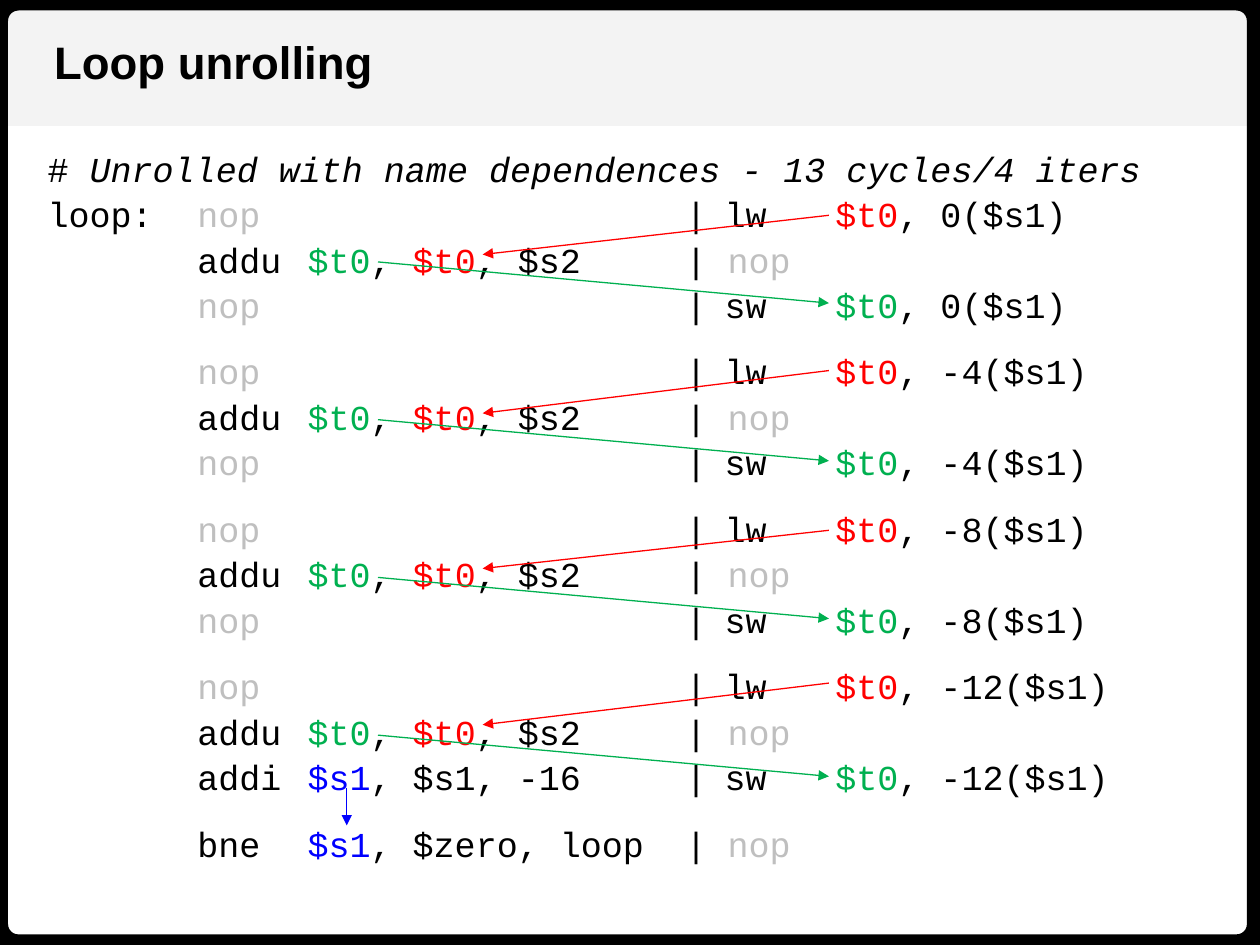
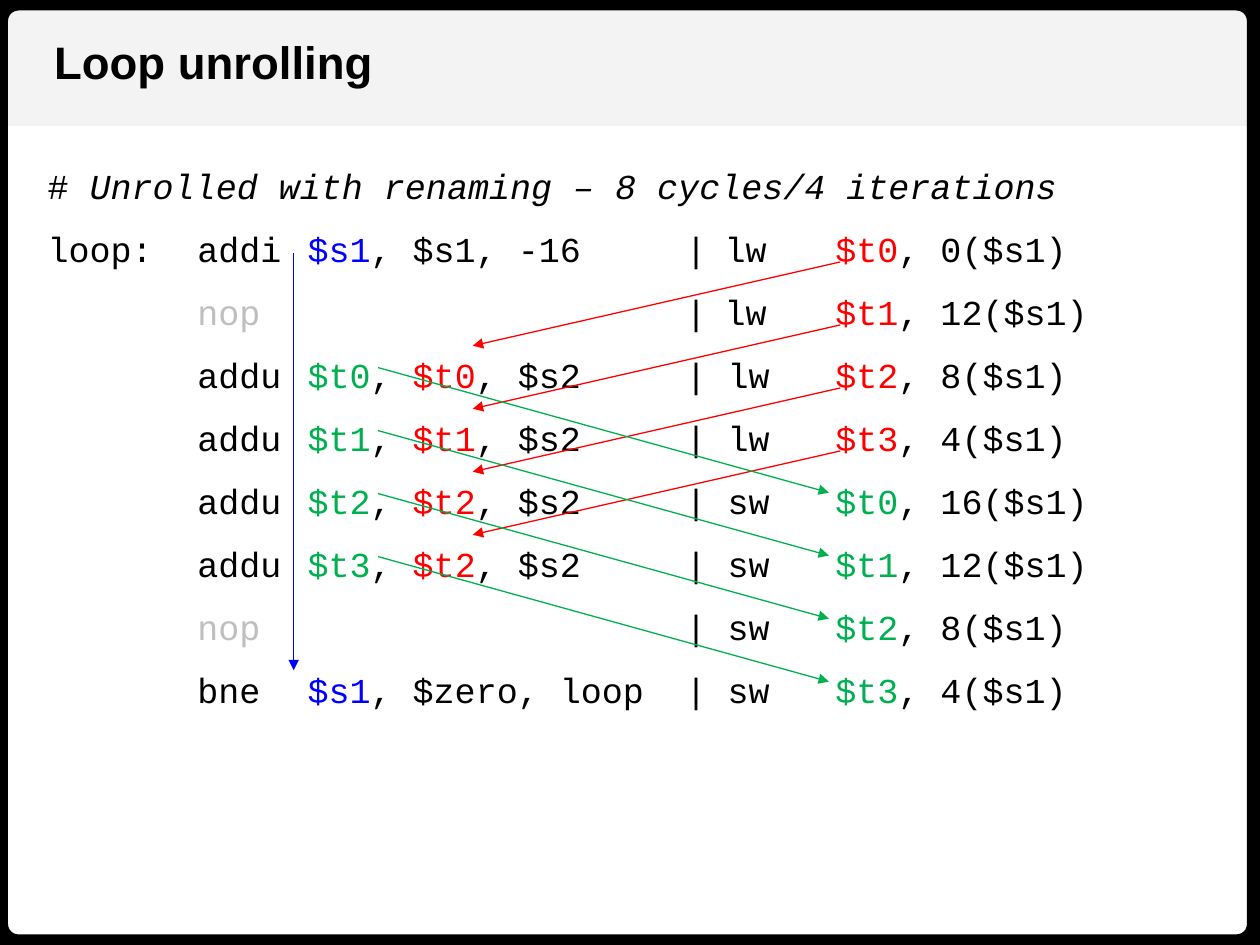
from lxml import etree
from pptx import Presentation
from pptx.dml.color import RGBColor
from pptx.enum.shapes import MSO_CONNECTOR, MSO_SHAPE
from pptx.enum.text import MSO_AUTO_SIZE
from pptx.oxml.ns import qn
from pptx.util import Cm, Pt

STRAIGHT = MSO_CONNECTOR.STRAIGHT
RECTANGLE = MSO_SHAPE.RECTANGLE
ROUNDED_RECTANGLE = MSO_SHAPE.ROUNDED_RECTANGLE
GROW = MSO_AUTO_SIZE.SHAPE_TO_FIT_TEXT

COLORS = {
    "black": "000000",
    "white": "FFFFFF",
    "band": "F3F3F3",
    "gray": "BFBFBF",
    "red": "FF0000",
    "green": "00B050",
    "blue": "0000FF",
}
TITLE_FONT = "Arial"
CODE_FONT = "Courier New"
SLIDE_WIDTH, SLIDE_HEIGHT = 25.4, 19.05
BLANK_LAYOUT = 6
# Operation, operands, separator, second operation, second operands
CODE_TABS = (3.02, 5.24, 12.86, 13.65, 15.88)


def color(name):
    return RGBColor.from_string(COLORS[name])


def add_run(paragraph, text, font=CODE_FONT, size=20, color_name="black",
            bold=False, italic=False):
    run = paragraph.add_run()
    run.text = text
    run.font.name = font
    run.font.size = Pt(size)
    run.font.bold = bold
    run.font.italic = italic
    run.font.color.rgb = color(color_name)


def add_text_box(slide, left, top, width, height, wrap=True):
    box = slide.shapes.add_textbox(Cm(left), Cm(top), Cm(width), Cm(height))
    box.text_frame.word_wrap = wrap
    box.text_frame.auto_size = GROW
    return box.text_frame


def add_band(slide):
    band = slide.shapes.add_shape(RECTANGLE, 0, 0, Cm(SLIDE_WIDTH), Cm(2.54))
    band.shadow.inherit = False
    band.fill.solid()
    band.fill.fore_color.rgb = color("band")
    band.line.fill.background()


def add_border(slide):
    border = slide.shapes.add_shape(ROUNDED_RECTANGLE, Cm(-0.05), 0,
                                    Cm(SLIDE_WIDTH), Cm(SLIDE_HEIGHT))
    border.adjustments[0] = 0.022
    border.shadow.inherit = False
    border.fill.background()
    border.line.color.rgb = color("black")
    border.line.width = Pt(12)


def add_titled_slide(presentation, title):
    slide = presentation.slides.add_slide(presentation.slide_layouts[BLANK_LAYOUT])
    slide.background.fill.solid()
    slide.background.fill.fore_color.rgb = color("white")
    add_band(slide)
    add_border(slide)
    frame = add_text_box(slide, 0.84, 0.56, 6.99, 1.37, wrap=False)
    add_run(frame.paragraphs[0], title, font=TITLE_FONT, size=26, bold=True)
    return slide


def set_tabs(paragraph, positions):
    properties = paragraph._p.get_or_add_pPr()
    tab_list = etree.SubElement(properties, qn("a:tabLst"))
    for position in positions:
        etree.SubElement(tab_list, qn("a:tab"), pos=str(Cm(position)), algn="l")


def marked(color_name, text):
    return f"{{{color_name}}}{text}{{black}}"


def red(text):
    return marked("red", text)


def green(text):
    return marked("green", text)


def blue(text):
    return marked("blue", text)


NOP = marked("gray", "nop")
IDLE = f"{NOP}\t"


def add_code_line(frame, line, line_spacing, space_before):
    """Write one line in which {name} switches the text colour."""
    paragraph = frame.add_paragraph()
    paragraph.line_spacing = line_spacing
    paragraph.space_before = Pt(space_before)
    set_tabs(paragraph, CODE_TABS)
    for piece in ("{black}" + line).split("{")[1:]:
        color_name, _, text = piece.partition("}")
        if text:
            add_run(paragraph, text, color_name=color_name)


def add_code(slide, height, comment, lines, line_spacing):
    """Write a comment, then lines given as (text, space before in points)."""
    frame = add_text_box(slide, 0.71, 2.77, 23.85, height)
    heading = frame.paragraphs[0]
    heading.line_spacing = line_spacing
    add_run(heading, "# ")
    add_run(heading, comment, italic=True)
    for line, space_before in lines:
        add_code_line(frame, line, line_spacing, space_before)


def add_arrow(slide, color_name, start_x, start_y, end_x, end_y):
    arrow = slide.shapes.add_connector(STRAIGHT, Cm(start_x), Cm(start_y),
                                       Cm(end_x), Cm(end_y))
    arrow.line.color.rgb = color(color_name)
    arrow.line.width = Pt(0.75)
    etree.SubElement(arrow.line._get_or_add_ln(), qn("a:tailEnd"), type="triangle")
    etree.SubElement(arrow._element.spPr, qn("a:effectLst"))


def name_dependence_lines():
    lines = []
    for offset in (0, -4, -8, -12):
        label = "loop:" if offset == 0 else ""
        beside_store = f"addi\t{blue('$s1')}, $s1, -16" if offset == -12 else IDLE
        lines += [
            (f"{label}\t{IDLE}\t|\tlw\t{red('$t0')}, {offset}($s1)", 12 if offset else 0),
            (f"\taddu\t{green('$t0')}, {red('$t0')}, $s2\t| {NOP}", 0),
            (f"\t{beside_store}\t|\tsw\t{green('$t0')}, {offset}($s1)", 0),
        ]
    return lines + [(f"\tbne\t{blue('$s1')}, $zero, loop\t| {NOP}", 12)]


def renamed_lines():
    left = [f"addi\t{blue('$s1')}, $s1, -16", IDLE]
    left += [f"addu\t{green(target)}, {red(source)}, $s2" for target, source in
             (("$t0", "$t0"), ("$t1", "$t1"), ("$t2", "$t2"), ("$t3", "$t2"))]
    left += [IDLE, f"bne\t{blue('$s1')}, $zero, loop"]
    right = [f"lw\t{red(f'$t{index}')}, {offset}($s1)"
             for index, offset in enumerate((0, 12, 8, 4))]
    right += [f"sw\t{green(f'$t{index}')}, {offset}($s1)"
              for index, offset in enumerate((16, 12, 8, 4))]
    lines = []
    for row, (first, second) in enumerate(zip(left, right)):
        label = "loop:" if row == 0 else ""
        gap = "\t" if row < 2 else " "
        lines.append((f"{label}\t{first}\t|{gap}{second}", 0))
    return lines


def add_name_dependence_slide(presentation):
    slide = add_titled_slide(presentation, "Loop unrolling")
    add_code(slide, 14.94, "Unrolled with name dependences - 13 cycles/4 iters",
             name_dependence_lines(), Pt(26))
    for load_y, use_y in ((4.34, 5.13), (7.47, 8.33), (10.69, 11.46), (13.77, 14.61)):
        add_arrow(slide, "red", 16.71, load_y, 9.73, use_y)
    for iteration in range(4):
        result_y = 5.28 + 3.18 * iteration
        add_arrow(slide, "green", 7.62, result_y, 16.71, result_y + 0.83)
    add_arrow(slide, "blue", 6.99, 15.88, 6.99, 16.64)


def add_renaming_slide(presentation):
    slide = add_titled_slide(presentation, "Loop unrolling")
    add_code(slide, 11.79, "Unrolled with renaming – 8 cycles/4 iterations",
             renamed_lines(), 1.5)
    row_pitch = 1.27
    for iteration in range(4):
        load_y = 5.28 + row_pitch * iteration
        add_arrow(slide, "red", 16.94, load_y, 9.53, load_y + 1.69)
    for iteration in range(4):
        result_y = 7.41 + row_pitch * iteration
        add_arrow(slide, "green", 7.62, result_y, 16.71, result_y + 2.52)
    add_arrow(slide, "blue", 5.92, 5.11, 5.92, 13.51)


def main():
    presentation = Presentation()
    presentation.slide_width = Cm(SLIDE_WIDTH)
    presentation.slide_height = Cm(SLIDE_HEIGHT)
    add_name_dependence_slide(presentation)
    add_renaming_slide(presentation)
    presentation.save("out.pptx")


if __name__ == "__main__":
    main()
